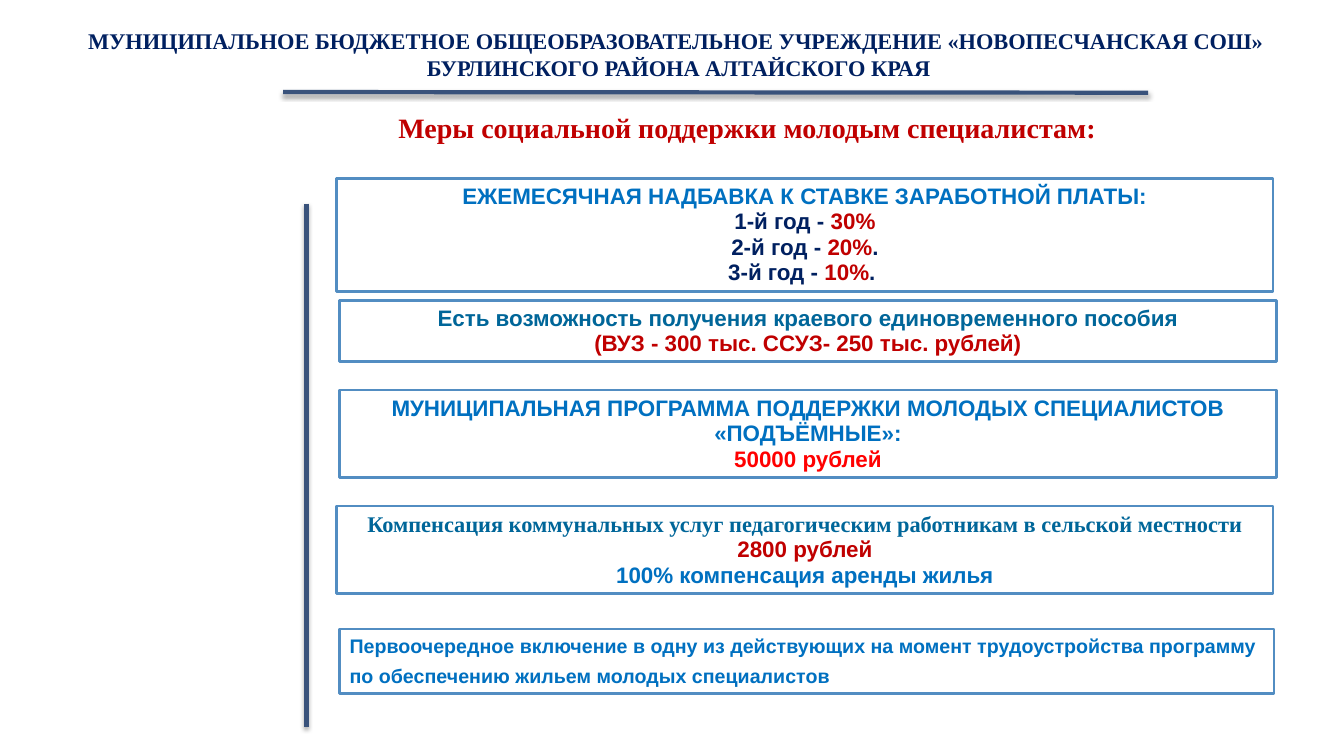
import dataclasses

import pptx
import pptx.dml.color
import pptx.enum.shapes
import pptx.enum.text
import pptx.oxml
import pptx.oxml.ns
import pptx.util

ALIGN = pptx.enum.text.PP_ALIGN
ANCHOR = pptx.enum.text.MSO_ANCHOR
AUTO_SIZE = pptx.enum.text.MSO_AUTO_SIZE


@dataclasses.dataclass(frozen=True)
class Theme:
    serif: str = "Times New Roman"
    sans: str = "Arial"
    navy: str = "002060"
    crimson: str = "C00000"
    red: str = "FF0000"
    blue: str = "0070C0"
    teal: str = "006699"
    rule: str = "39527B"
    border: str = "528DC2"
    white: str = "FFFFFF"
    title_size: int = 20
    body_size: int = 16
    note_size: int = 14
    tail_size: int = 18
    rule_width: int = 3
    border_width: int = 2
    tight: float = 0.95


def rgb(code):
    return pptx.dml.color.RGBColor.from_string(code)


def add_span(para, text, *, color, font, size, bold=True):
    span = para.add_run()
    span.text = text
    span.font.name = font
    span.font.size = pptx.util.Pt(size)
    span.font.bold = bold
    span.font.color.rgb = rgb(color)


class SlideBuilder:
    COLUMNS = 400
    ROWS = 225

    def __init__(self, deck, theme):
        self.theme = theme
        self.cell_width = deck.slide_width / self.COLUMNS
        self.cell_height = deck.slide_height / self.ROWS
        self.page = deck.slides.add_slide(deck.slide_layouts[5])

    def place(self, column, row, width, height):
        return (
            round(column * self.cell_width),
            round(row * self.cell_height),
            round(width * self.cell_width),
            round(height * self.cell_height),
        )

    def fill_text(self, box, lines, *, font, size, align=ALIGN.CENTER, spacing=None,
                  anchor=ANCHOR.TOP, wrap=True, fit=AUTO_SIZE.SHAPE_TO_FIT_TEXT):
        frame = box.text_frame
        frame.word_wrap = wrap
        frame.auto_size = fit
        frame.vertical_anchor = anchor
        for index, spans in enumerate(lines):
            para = frame.paragraphs[0] if index == 0 else frame.add_paragraph()
            para.alignment = align
            if spacing:
                para.line_spacing = spacing
            for text, color, *changes in spans:
                style = {"font": font, "size": size, "color": color}
                for change in changes:
                    style.update(change)
                add_span(para, text, **style)

    def header(self, lines, *area):
        box = self.page.shapes.add_textbox(*self.place(*area))
        spans = [[(line, self.theme.navy)] for line in lines]
        self.fill_text(box, spans, font=self.theme.serif,
                       size=self.theme.body_size, wrap=False)

    def title(self, text, *area):
        box = self.page.shapes.title
        box.left, box.top, box.width, box.height = self.place(*area)
        self.fill_text(box, [[(text, self.theme.crimson)]], font=self.theme.serif,
                       size=self.theme.title_size, spacing=self.theme.tight,
                       fit=AUTO_SIZE.NONE)

    def rule(self, column, row, width, height):
        left, top, across, down = self.place(column, row, width, height)
        line = self.page.shapes.add_connector(
            pptx.enum.shapes.MSO_CONNECTOR.STRAIGHT,
            left, top, left + across, top + down)
        line.line.color.rgb = rgb(self.theme.rule)
        line.line.width = pptx.util.Pt(self.theme.rule_width)
        shadow = pptx.oxml.parse_xml(
            f'<a:effectLst {pptx.oxml.ns.nsdecls("a")}>'
            f'<a:outerShdw blurRad="{pptx.util.Pt(3.1)}" dist="{pptx.util.Pt(1.8)}" '
            'dir="5400000" rotWithShape="0"><a:srgbClr val="000000">'
            '<a:alpha val="35000"/></a:srgbClr></a:outerShdw></a:effectLst>')
        line._element.spPr.append(shadow)

    def panel(self, lines, *area, size=None, **layout):
        box = self.page.shapes.add_shape(
            pptx.enum.shapes.MSO_SHAPE.RECTANGLE, *self.place(*area))
        box.shadow.inherit = False
        box.fill.solid()
        box.fill.fore_color.rgb = rgb(self.theme.white)
        box.line.color.rgb = rgb(self.theme.border)
        box.line.width = pptx.util.Pt(self.theme.border_width)
        self.fill_text(box, lines, font=self.theme.sans,
                       size=size or self.theme.body_size,
                       anchor=ANCHOR.MIDDLE, **layout)


def main():
    deck = pptx.Presentation()
    deck.slide_width = pptx.util.Inches(13.33)
    deck.slide_height = pptx.util.Inches(7.5)
    theme = Theme()
    builder = SlideBuilder(deck, theme)

    builder.header(
        ["МУНИЦИПАЛЬНОЕ БЮДЖЕТНОЕ ОБЩЕОБРАЗОВАТЕЛЬНОЕ УЧРЕЖДЕНИЕ «НОВОПЕСЧАНСКАЯ СОШ» ",
         "БУРЛИНСКОГО РАЙОНА АЛТАЙСКОГО КРАЯ"],
        21, 6.6, 362, 19.2)
    builder.rule(84.3, 27.4, 257.4, 0.2)
    builder.title("Меры социальной поддержки молодым специалистам:",
                  65.4, 32.1, 314, 12.6)
    builder.rule(91.2, 60.6, 0, 155.7)

    bonuses = [("1-й год - ", "30%", ""), ("2-й год - ", "20%", "."),
               ("3-й год - ", "10%", ". ")]
    bonus_lines = [
        [(text, color) for text, color
         in zip(parts, (theme.navy, theme.crimson, theme.navy)) if text]
        for parts in bonuses]
    left, inset_left, width = 100.2, 101.1, 278.7

    builder.panel(
        [[("ЕЖЕМЕСЯЧНАЯ НАДБАВКА К СТАВКЕ ЗАРАБОТНОЙ ПЛАТЫ:", theme.blue)],
         *bonus_lines],
        left, 53.1, width, 33.6, spacing=theme.tight)
    builder.panel(
        [[("Есть возможность получения краевого единовременного пособия", theme.teal)],
         [("(ВУЗ - 300 тыс. ССУЗ- 250 тыс. рублей)", theme.crimson)]],
        inset_left, 89.4, width, 18.3, spacing=theme.tight)
    builder.panel(
        [[("МУНИЦИПАЛЬНАЯ ПРОГРАММА ПОДДЕРЖКИ МОЛОДЫХ СПЕЦИАЛИСТОВ «ПОДЪЁМНЫЕ»:",
           theme.blue)],
         [("50000 рублей", theme.red)]],
        inset_left, 116.1, width, 26.1, spacing=theme.tight)
    builder.panel(
        [[("Компенсация коммунальных услуг педагогическим работникам в сельской местности ",
           theme.teal, {"font": theme.serif}),
          ("2800 рублей", theme.crimson)],
         [("100% компенсация аренды жилья", theme.blue)]],
        left, 150.6, width, 26.1, spacing=theme.tight)
    builder.panel(
        [[("Первоочередное включение в одну из действующих на момент трудоустройства "
           "программу по обеспечению жильем молодых специалистов", theme.blue),
          (" ", theme.blue, {"size": theme.tail_size, "bold": False})]],
        inset_left, 187.2, 278.1, 19.2, size=theme.note_size, align=ALIGN.LEFT)

    deck.save("out.pptx")


if __name__ == "__main__":
    main()
